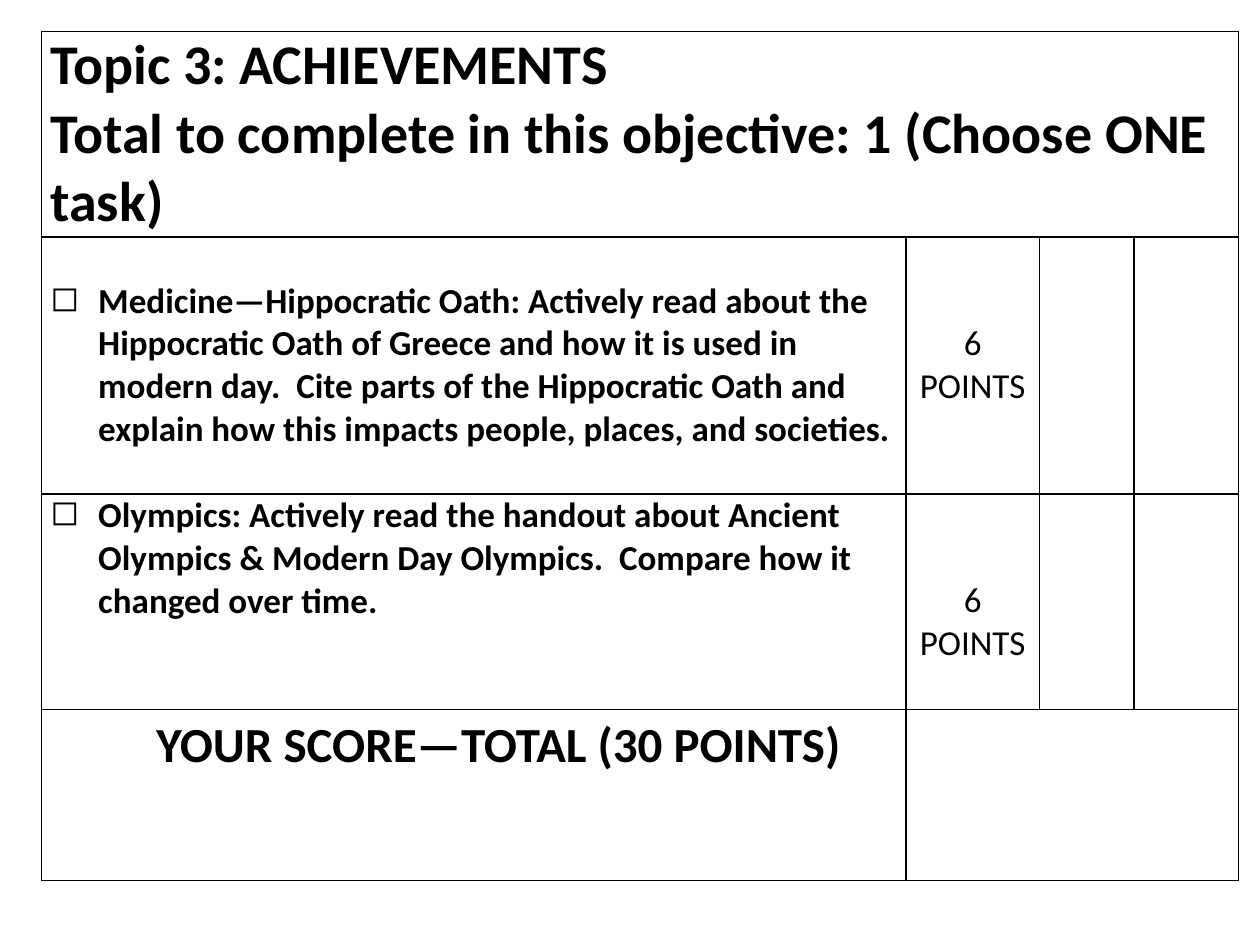
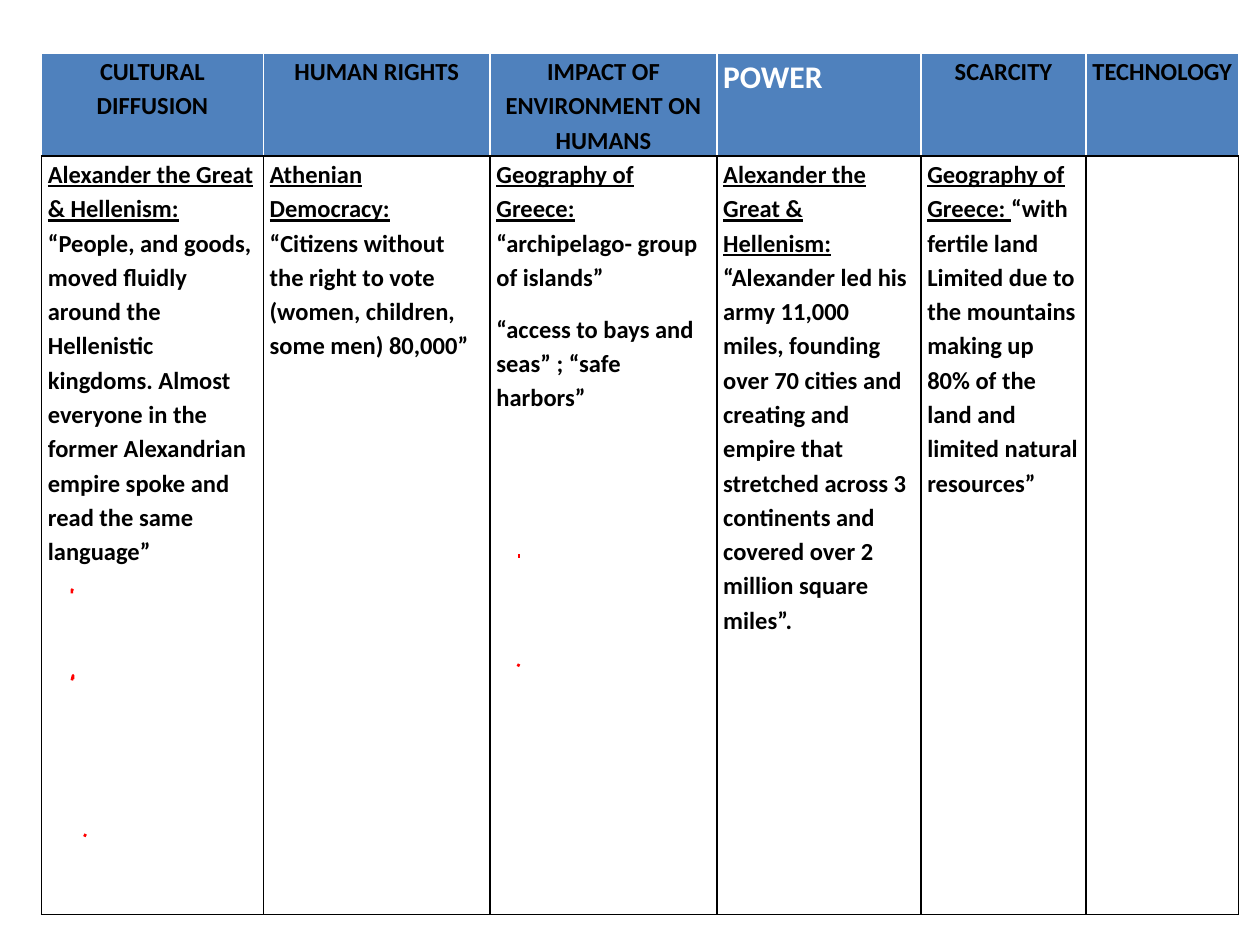
from lxml.etree import SubElement
from pptx import Presentation
from pptx.dml.color import RGBColor
from pptx.enum.shapes import MSO_CONNECTOR
from pptx.enum.text import PP_ALIGN
from pptx.oxml import parse_xml
from pptx.oxml.ns import nsdecls, qn
from pptx.util import Emu, Pt

PX = 9144
FONT = "Calibri"
COLORS = {"ink": "000000", "paper": "FFFFFF", "header": "4F81BD", "mark": "FF0000"}
BLACK_GRID = ("ink", "ink", "ink", "ink")
HEADER_GRID = ("paper", "paper", "paper", "ink")

TOPIC_COLUMNS = (686, 106, 75, 83)
TOPIC_ROWS = (163, 204, 171, 136)
TOPIC_HEADING = (
    "Topic 3: ACHIEVEMENTS",
    "Total to complete in this objective: 1 (Choose ONE task)",
)
TASKS = (
    ("Medicine—Hippocratic Oath: Actively read about the Hippocratic Oath of Greece "
     "and how it is used in modern day.  Cite parts of the Hippocratic Oath and explain "
     "how this impacts people, places, and societies.", 34),
    ("Olympics: Actively read the handout about Ancient Olympics & Modern Day Olympics.  "
     "Compare how it changed over time.", 0),
)

THEME_COLUMNS = (176, 180, 180, 162, 131, 121)
THEME_ROWS = (81, 602)
THEMES = (
    ("CULTURAL DIFFUSION", "Alexander the Great & Hellenism: ",
     ("“People, and goods, moved fluidly around the Hellenistic kingdoms. Almost everyone "
      "in the former Alexandrian empire spoke and read the same language”",)),
    ("HUMAN RIGHTS", "Athenian Democracy: ",
     ("“Citizens without the right to vote (women, children, some men) 80,000”",)),
    ("IMPACT OF ENVIRONMENT ON HUMANS", "Geography of Greece: ",
     ("“archipelago- group of islands”", "“access to bays and seas” ; “safe harbors”")),
    ("POWER", "Alexander the Great & Hellenism: ",
     ("“Alexander led his army 11,000 miles, founding over 70 cities and creating and "
      "empire that stretched across 3 continents and covered over 2 million square miles”.",)),
    ("SCARCITY", "Geography of Greece: ",
     ("“with fertile land Limited due to the mountains making up 80% of the land and "
      "limited natural resources”",)),
    ("TECHNOLOGY", "", ()),
)
PEN_MARKS = (
    ((58, 469), (57, 468), (57, 471)),
    ((57, 540), (58, 536), (58, 539)),
    ((68, 662), (67, 664)),
    ((412, 440), (412, 443)),
    ((412, 527), (411, 529)),
)


def px(length):
    return Emu(length * PX)


def color(name):
    return RGBColor.from_string(COLORS[name])


def add_grid(page, left, top, columns, rows, inset):
    frame = page.shapes.add_table(
        len(rows), len(columns), px(left), px(top), px(sum(columns)), px(sum(rows)))
    table = frame.table
    table.first_row = table.horz_banding = False
    for column, width in zip(table.columns, columns):
        column.width = px(width)
    for row, height in zip(table.rows, rows):
        row.height = px(height)
    for cell in table.iter_cells():
        cell.margin_left = cell.margin_right = px(inset)
        cell.margin_top = cell.margin_bottom = 0
    return table


def style_cell(cell, fill, borders):
    cell.fill.solid()
    cell.fill.fore_color.rgb = color(fill)
    properties = cell._tc.get_or_add_tcPr()
    for position, (side, name) in enumerate(zip("LRTB", borders)):
        properties.insert(position, parse_xml(
            f'<a:ln{side} {nsdecls("a")} w="12700"><a:solidFill>'
            f'<a:srgbClr val="{COLORS[name]}"/></a:solidFill></a:ln{side}>'))


def format_span(span, size, bold=True, ink="ink", underline=False):
    span.font.name = FONT
    span.font.size = Pt(size)
    span.font.bold = bold
    span.font.underline = underline
    span.font.color.rgb = color(ink)


def write_cell(cell, lines, size, bold=True, ink="ink", align=PP_ALIGN.LEFT):
    cell.text_frame.text = "\n".join(lines)
    for para in cell.text_frame.paragraphs:
        para.alignment = align
        for span in para.runs:
            format_span(span, size, bold, ink)


def add_checkbox(para):
    properties = para._p.get_or_add_pPr()
    properties.set("marL", str(px(38)))
    properties.set("indent", str(px(-38)))
    SubElement(properties, qn("a:buChar")).set("char", "◻")


def space_lines(cell):
    for para in cell.text_frame.paragraphs:
        para.line_spacing = 1.15
        para.space_after = Pt(10)


def write_evidence(cell, source, quotes):
    write_cell(cell, quotes, 14)
    first = cell.text_frame.paragraphs[0]
    first.text = source
    format_span(first.runs[0], 14, underline=True)
    quote = first.add_run()
    quote.text = quotes[0]
    format_span(quote, 14)
    space_lines(cell)


def add_pen_mark(page, points):
    start, *others = points
    if len(others) == 1:
        mark = page.shapes.add_connector(
            MSO_CONNECTOR.STRAIGHT, *(px(value) for value in start + others[0]))
        SubElement(mark._element.spPr, qn("a:effectLst"))
    else:
        builder = page.shapes.build_freeform(*start, scale=PX)
        builder.add_line_segments(others, close=False)
        mark = builder.convert_to_shape()
        mark.fill.background()
        mark.shadow.inherit = False
    mark.line.color.rgb = color("mark")
    mark.line.width = Pt(1.5)


def build_achievements(page):
    table = add_grid(page, 33, 25, TOPIC_COLUMNS, TOPIC_ROWS, 7)
    table.cell(0, 0).merge(table.cell(0, 3))
    table.cell(3, 1).merge(table.cell(3, 3))
    for cell in table.iter_cells():
        style_cell(cell, "paper", BLACK_GRID)
    write_cell(table.cell(0, 0), TOPIC_HEADING, 32)
    for row, (task, gap) in enumerate(TASKS, 1):
        task_cell, points_cell = table.cell(row, 0), table.cell(row, 1)
        write_cell(task_cell, [task], 20)
        task_cell.margin_top = px(gap)
        add_checkbox(task_cell.text_frame.paragraphs[0])
        write_cell(points_cell, ["6 POINTS"], 20, bold=False, align=PP_ALIGN.CENTER)
        points_cell.margin_top = px(68)
    score = table.cell(3, 0)
    write_cell(score, ["YOUR SCORE—TOTAL (30 POINTS)"], 28, align=PP_ALIGN.CENTER)
    score.margin_left = px(46)
    score.margin_top = px(5)


def build_themes(page):
    table = add_grid(page, 33, 42, THEME_COLUMNS, THEME_ROWS, 5)
    for column, (theme, source, quotes) in enumerate(THEMES):
        header, evidence = table.cell(0, column), table.cell(1, column)
        style_cell(header, "header", HEADER_GRID)
        style_cell(evidence, "paper", BLACK_GRID)
        if theme == "POWER":
            write_cell(header, [theme], 18, ink="paper")
        else:
            write_cell(header, [theme], 14, align=PP_ALIGN.CENTER)
        space_lines(header)
        if quotes:
            write_evidence(evidence, source, quotes)
    for points in PEN_MARKS:
        add_pen_mark(page, points)


def main():
    deck = Presentation()
    deck.slide_width, deck.slide_height = px(1000), px(750)
    blank = deck.slide_layouts[6]
    for build in (build_achievements, build_themes):
        build(deck.slides.add_slide(blank))
    deck.save("out.pptx")


if __name__ == "__main__":
    main()
